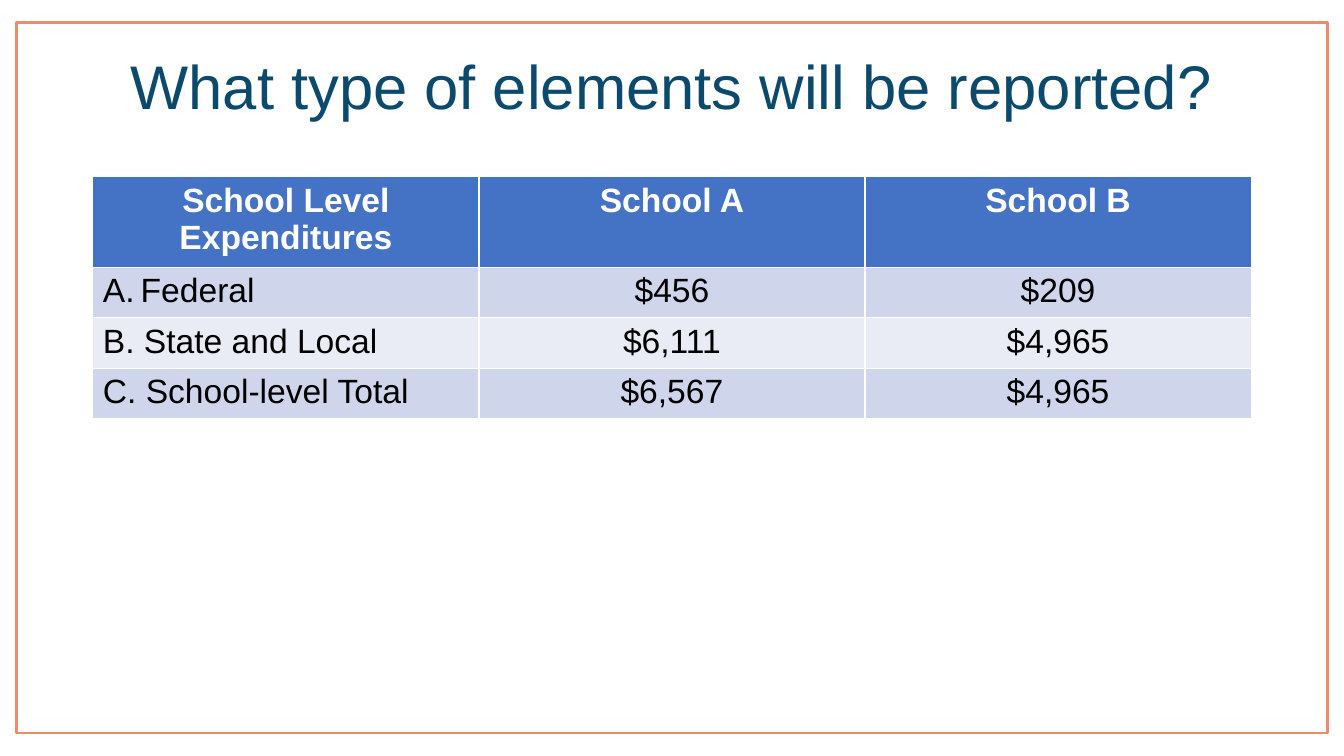
import pptx
import pptx.dml.color
import pptx.enum.shapes
import pptx.enum.text
import pptx.oxml.ns
import pptx.util
from lxml import etree

Pt = pptx.util.Pt
RGB = pptx.dml.color.RGBColor
Align = pptx.enum.text.PP_ALIGN

CORAL = RGB(0xED, 0x8B, 0x6F)
NAVY = RGB(0x0C, 0x4A, 0x6D)
BLUE = RGB(0x44, 0x72, 0xC4)
BANDS = [RGB(0xCF, 0xD5, 0xEA), RGB(0xE9, 0xEB, 0xF5)]
WHITE = RGB(0xFF, 0xFF, 0xFF)
BLACK = RGB(0x00, 0x00, 0x00)

HEAD = {"name": "Arial", "size": Pt(24), "bold": True}
BODY = {"name": "Arial", "size": Pt(24), "bold": False}
TITLE = {"name": "Arial", "size": Pt(44), "bold": False}

COSTS = [
    ["School Level Expenditures", "School A", "School B"],
    ["Federal", "$456", "$209"],
    ["B. State and Local", "$6,111", "$4,965"],
    ["C. School-level Total", "$6,567", "$4,965"],
]


def write(para, text, style, color, align):
    """Put one formatted run in a paragraph."""
    run = para.add_run()
    run.text = text
    for key, value in style.items():
        setattr(run.font, key, value)
    run.font.color.rgb = color
    para.alignment = align


def letter(para, indent):
    """Number a paragraph A, B, C with a hanging indent."""
    props = para._p.get_or_add_pPr()
    props.set("marL", str(indent))
    props.set("indent", str(-indent))
    mark = etree.SubElement(props, pptx.oxml.ns.qn("a:buAutoNum"))
    mark.set("type", "alphaUcPeriod")


def add_frame(slide):
    """Draw the coral frame around the slide."""
    kind = pptx.enum.shapes.MSO_SHAPE.RECTANGLE
    frame = slide.shapes.add_shape(kind, Pt(12), Pt(16), Pt(936), Pt(507.6))
    frame.shadow.inherit = False
    frame.fill.background()
    frame.line.color.rgb = CORAL
    frame.line.width = Pt(2)


def add_title(slide, text):
    """Add the centred slide title."""
    box = slide.shapes.add_textbox(Pt(12), Pt(12), Pt(936), Pt(104.4))
    frame = box.text_frame
    frame.word_wrap = True
    frame.vertical_anchor = pptx.enum.text.MSO_ANCHOR.MIDDLE
    para = frame.paragraphs[0]
    para.line_spacing = 0.9
    write(para, text, TITLE, NAVY, Align.CENTER)


def add_costs(slide, rows):
    """Add the table of expenditures with banded rows."""
    size = len(rows), len(rows[0])
    table = slide.shapes.add_table(
        *size, Pt(66.3), Pt(126.2), Pt(827.4), Pt(162)).table
    for col in table.columns:
        col.width = Pt(275.8)
    for i, row in enumerate(rows):
        table.rows[i].height = Pt(34 if i else 60)
        for j, text in enumerate(row):
            cell = table.cell(i, j)
            cell.fill.solid()
            cell.fill.fore_color.rgb = BANDS[(i - 1) % 2] if i else BLUE
            style, color = (BODY, BLACK) if i else (HEAD, WHITE)
            align = Align.LEFT if i and not j else Align.CENTER
            write(cell.text_frame.paragraphs[0], text, style, color, align)
    letter(table.cell(1, 0).text_frame.paragraphs[0], Pt(27))


def main():
    """Build and save the slide."""
    deck = pptx.Presentation()
    deck.slide_width, deck.slide_height = Pt(960), Pt(540)
    slide = deck.slides.add_slide(deck.slide_layouts[6])
    add_frame(slide)
    add_title(slide, "What type of elements will be reported?")
    add_costs(slide, COSTS)
    deck.save("out.pptx")


if __name__ == "__main__":
    main()
